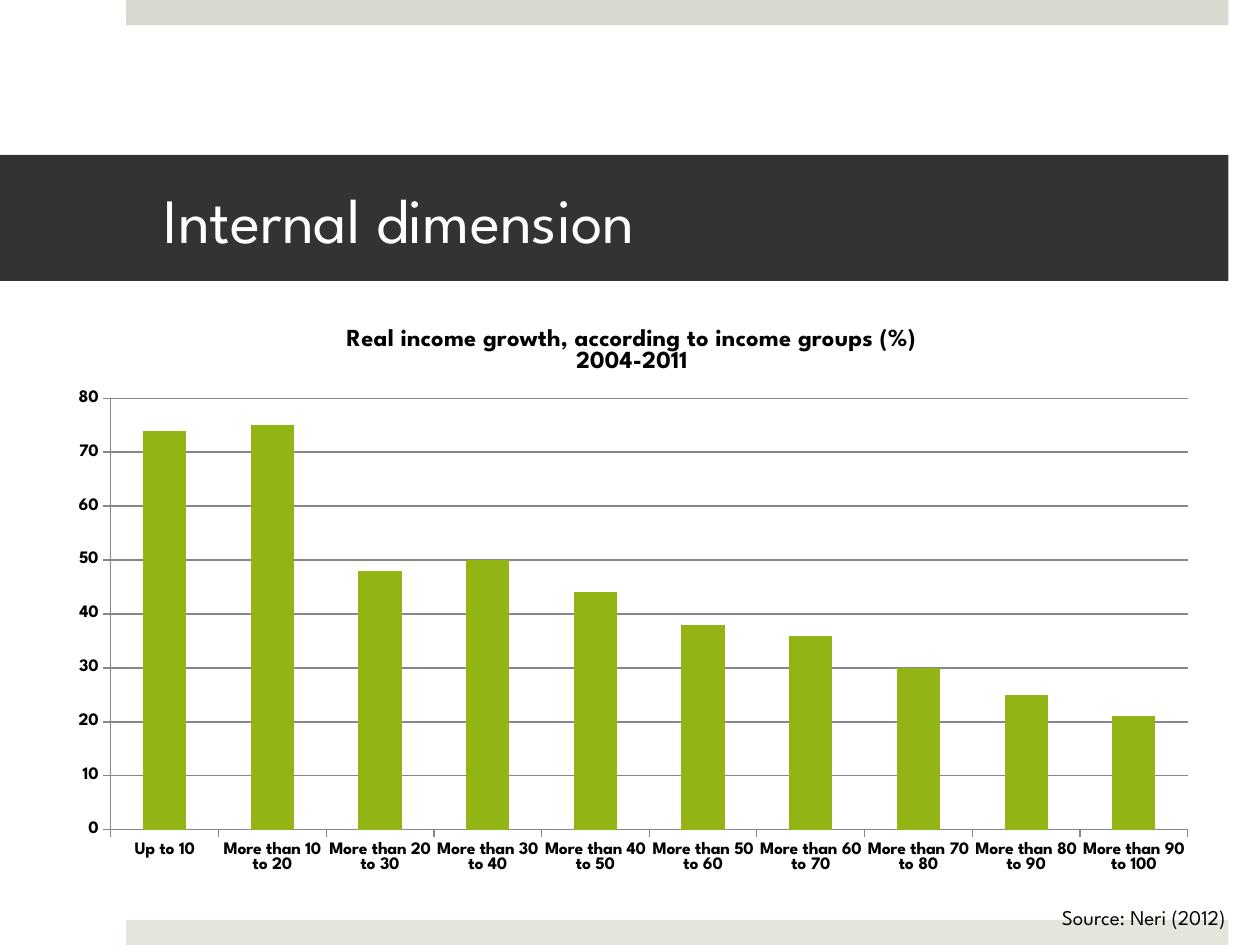
from typing import NamedTuple

from lxml.etree import SubElement
from pptx import Presentation
from pptx.chart.chart import Chart
from pptx.chart.data import CategoryChartData
from pptx.dml.color import RGBColor
from pptx.enum.chart import XL_CHART_TYPE, XL_TICK_MARK
from pptx.enum.shapes import MSO_SHAPE
from pptx.enum.text import MSO_ANCHOR, MSO_AUTO_SIZE, PP_ALIGN
from pptx.oxml import parse_xml
from pptx.oxml.ns import nsdecls, qn
from pptx.slide import Slide
from pptx.util import Pt

FONT = "League Spartan"
BLACK = "000000"
BAR_GREEN = "92B414"
GRID_GRAY = "878787"


class Box(NamedTuple):
    left: float
    top: float
    width: float
    height: float

    def lengths(self) -> list[Pt]:
        return [Pt(value) for value in self]


class Band(NamedTuple):
    box: Box
    color: str


BANDS = [
    Band(Box(72, 0, 630, 14.4), "D6D9CD"),
    Band(Box(72, 525.6, 630, 14.4), "E4E6DE"),
]
INCOME_GROWTH = [74, 75, 48, 50, 44, 38, 36, 30, 25, 21]
INCOME_GROUPS = ["Up to 10"] + [
    f"More than {lower} to {lower + 10}" for lower in range(10, 100, 10)
]


def rgb(color: str) -> RGBColor:
    return RGBColor.from_string(color)


def format_font(font, size: float, color: str, bold: bool = False) -> None:
    font.name = FONT
    font.size = Pt(size)
    font.bold = bold
    font.color.rgb = rgb(color)


def draw_band(slide: Slide, band: Band) -> None:
    shape = slide.shapes.add_shape(MSO_SHAPE.RECTANGLE, *band.box.lengths())
    shape.shadow.inherit = False
    shape.fill.solid()
    shape.fill.fore_color.rgb = rgb(band.color)
    shape.line.fill.background()


def draw_title(slide: Slide, text: str, box: Box) -> None:
    title = slide.shapes.title
    title.left, title.top, title.width, title.height = box.lengths()
    title.fill.solid()
    title.fill.fore_color.rgb = rgb("333333")
    text_frame = title.text_frame
    text_frame.text = text
    text_frame.auto_size = MSO_AUTO_SIZE.NONE
    text_frame.vertical_anchor = MSO_ANCHOR.MIDDLE
    text_frame.margin_left, text_frame.margin_right = Pt(93.6), Pt(21.6)
    paragraph = text_frame.paragraphs[0]
    paragraph.alignment = PP_ALIGN.LEFT
    format_font(paragraph.runs[0].font, 36, "FFFFFF")


def place_plot(chart: Chart, area: Box) -> None:
    plot_area = chart._chartSpace.chart.plotArea
    for layout in plot_area.findall(qn("c:layout")):
        plot_area.remove(layout)
    layout = parse_xml(f"<c:layout {nsdecls('c')}><c:manualLayout/></c:layout>")
    settings = {"layoutTarget": "inner", "xMode": "edge", "yMode": "edge"}
    settings |= dict(zip("xywh", area))
    for name, value in settings.items():
        SubElement(layout[0], qn(f"c:{name}"), val=str(value))
    plot_area.insert(0, layout)


def draw_chart(slide: Slide, title_lines: list[str], box: Box) -> None:
    data = CategoryChartData()
    data.categories = INCOME_GROUPS
    data.add_series("Series 1", INCOME_GROWTH)
    frame = slide.shapes.add_chart(
        XL_CHART_TYPE.COLUMN_CLUSTERED, *box.lengths(), data
    )
    chart = frame.chart
    format_font(chart.font, 10, BLACK, bold=True)
    chart.has_legend = False
    chart.has_title = True
    chart.chart_title.include_in_layout = False
    title_frame = chart.chart_title.text_frame
    title_frame.text = "\n".join(title_lines)
    for paragraph in title_frame.paragraphs:
        format_font(paragraph.runs[0].font, 14, BLACK, bold=True)
    plot = chart.plots[0]
    plot.gap_width = 150
    plot.vary_by_categories = False
    bars = plot.series[0].format.fill
    bars.solid()
    bars.fore_color.rgb = rgb(BAR_GREEN)
    value_axis = chart.value_axis
    value_axis.minimum_scale, value_axis.maximum_scale = 0, 80
    value_axis.major_unit = 10
    value_axis.has_major_gridlines = True
    for axis in (chart.category_axis, value_axis):
        axis.major_tick_mark = XL_TICK_MARK.OUTSIDE
    for lines in (chart.category_axis, value_axis, value_axis.major_gridlines):
        lines.format.line.color.rgb = rgb(GRID_GRAY)
        lines.format.line.width = Pt(0.75)
    place_plot(chart, Box(0.05, 0.16, 0.93, 0.74))


def draw_source(slide: Slide, text: str, box: Box) -> None:
    text_frame = slide.shapes.add_textbox(*box.lengths()).text_frame
    text_frame.word_wrap = False
    text_frame.auto_size = MSO_AUTO_SIZE.SHAPE_TO_FIT_TEXT
    text_frame.text = text
    format_font(text_frame.paragraphs[0].runs[0].font, 12, BLACK)


def main() -> None:
    """Build the income growth slide and save it."""
    presentation = Presentation()
    presentation.slide_width, presentation.slide_height = Pt(720), Pt(540)
    slide = presentation.slides.add_slide(presentation.slide_layouts[5])
    for band in BANDS:
        draw_band(slide, band)
    draw_title(slide, "Internal dimension", Box(0, 88.56, 702, 72))
    draw_chart(
        slide,
        ["Real income growth, according to income groups (%)", "2004-2011"],
        Box(30.24, 174.24, 661.68, 333.36),
    )
    draw_source(slide, "Source: Neri (2012)", Box(599.76, 513.36, 123.84, 21.6))
    presentation.save("out.pptx")


if __name__ == "__main__":
    main()
